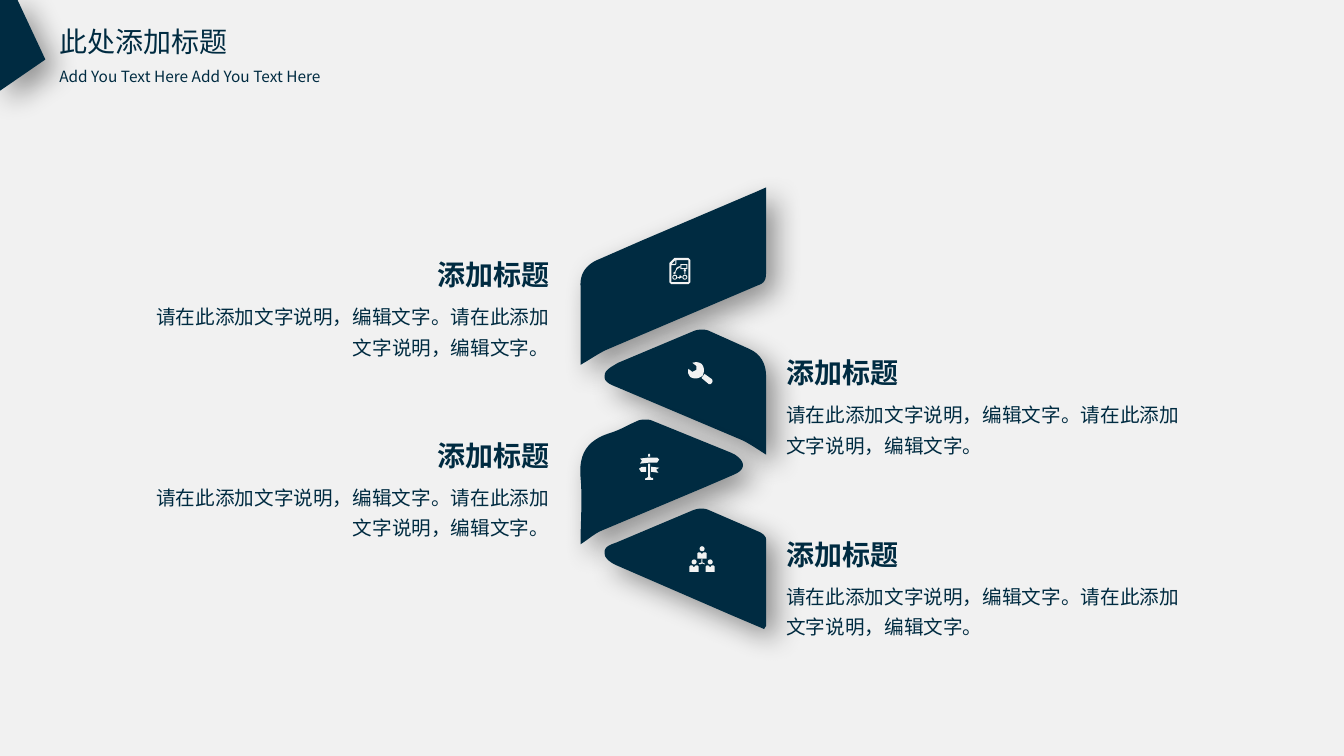
from lxml import etree
from pptx import Presentation
from pptx.dml.color import RGBColor
from pptx.enum.shapes import MSO_SHAPE
from pptx.enum.text import MSO_ANCHOR, MSO_AUTO_SIZE, PP_ALIGN
from pptx.oxml import parse_xml
from pptx.oxml.ns import qn
from pptx.util import Pt

LEFT, RIGHT = PP_ALIGN.LEFT, PP_ALIGN.RIGHT
TOP, NO_FIT = MSO_ANCHOR.TOP, MSO_AUTO_SIZE.NONE
OVAL, DONUT = MSO_SHAPE.OVAL, MSO_SHAPE.DONUT
COMPARISON_LAYOUT = 3 + 1
FONT = "Noto Sans CJK SC"
COLORS = {"navy": "002B41", "icon": "F2F2F2", "page": "F1F1F1"}
DRAWING_NS = "http://schemas.openxmlformats.org/drawingml/2006/main"
SHADOW = f"""<a:effectLst xmlns:a="{DRAWING_NS}">
<a:outerShdw blurRad="{Pt(20)}" dist="{Pt(10)}" dir="2700000" algn="tl" rotWithShape="0">
<a:srgbClr val="000000"><a:alpha val="40000"/></a:srgbClr></a:outerShdw></a:effectLst>"""

HEADING = "添加标题"
DETAIL = "请在此添加文字说明，编辑文字。请在此添加文字说明，编辑文字。"
ITEMS = [(LEFT, 180.7), (RIGHT, 250.6), (LEFT, 309.6), (RIGHT, 380.2)]  # side, top

# Outlines in points: pairs are corners, sextets are cubic curves
CORNER = [(12.2, -0.7), (0, -0.7), (0, 64.8), (32.4, 42.5)]
BANDS = [
    [(547.2, 133.9), (547.2, 195.1), (547.2, 200.2, 545.8, 202.3, 541.4, 203.8),
     (433.4, 249.8), (427, 252.7, 421.2, 257, 414.7, 260.6), (414.7, 205.2),
     (414, 195.1, 419, 188.6, 428.4, 185), (457.9, 172.1), (540.7, 136.8)],
    [(547.2, 324.7), (541.4, 321.1, 536.4, 317.5, 530.6, 314.6), (440.6, 276.5),
     (437, 275, 430.6, 272.9, 432, 267.8), (432, 264.2, 437.8, 261.4, 441.4, 259.2),
     (496.1, 236.2), (499.7, 235.1, 503.3, 235.1, 506.2, 236.2), (535, 249.1),
     (542.9, 252.7, 547.2, 259.2, 547.2, 268.6)],
    [(414.7, 388.8), (414.7, 373, 416.2, 356.4, 414.7, 340.6),
     (413.3, 324, 419.8, 314.6, 434.9, 309.6), (442.8, 307.4, 449.3, 303.1, 456.5, 300.2),
     (459.4, 299.5, 463, 299.5, 465.1, 300.2), (522, 323.3), (524.9, 324.7),
     (532.8, 329.8, 532.8, 335.5, 524.2, 339.1), (504, 347.8), (430.6, 378.7),
     (424.8, 380.9, 420.5, 385.2, 414.7, 388.8)],
    [(545.8, 449.3), (522, 439.2), (440.6, 403.9), (437, 402.5, 432, 398.9, 432, 396),
     (430.6, 390.2, 437, 388.8, 440.6, 387.4), (495.4, 364.3),
     (499.7, 362.9, 502.6, 362.9, 506.2, 364.3), (542.9, 380.2),
     (544.3, 380.9, 547.2, 383, 547.2, 385.2), (547.2, 447.1)],
]

# Icons: each part is a list of contours, later contours cut holes
DOCUMENT = [
    [[(478.1, 187.9), (481.7, 184.3), (491.8, 184.3), (493.2, 185.8), (493.2, 201.6),
      (491.8, 203), (479.5, 203), (478.1, 201.6)],
     [(482.4, 189.4), (479.5, 189.4), (479.5, 201.6), (491.8, 201.6), (491.8, 185.8),
      (483.1, 185.8), (483.1, 188.6)],
     [(479.5, 188.6), (482.4, 188.6), (482.4, 185.8)]],
    [[(486, 188.6), (491, 188.6), (491, 192.2), (486, 192.2)],
     [(486.7, 189.4), (490.3, 189.4), (490.3, 191.5), (486.7, 191.5)]],
    [[(486, 190.1), (485.3, 190.1, 483.8, 190.8, 483.1, 191.5),
      (483.1, 192.2, 482.4, 193.7, 481.7, 194.4), (481, 194.8), (481.2, 195.8),
      (483.1, 195.1), (482.4, 194.4), (483.8, 192.2), (486, 190.8)]],
    [[(483.8, 198), (485.3, 198), (485.3, 197), (486, 196.6), (487.4, 198), (486, 198.7),
      (485.3, 199.3), (485.3, 198.7), (483.8, 198.7)]],
    [[(488.9, 192.2), (489.6, 192.2), (490.3, 193.7), (489.6, 193.7), (489.6, 195.8),
      (488.9, 195.8), (488.9, 193.7), (488.2, 193.7)]],
]
WRENCH = [
    [[(508.3, 270.7), (503.3, 267.1), (501.1, 270), (506.2, 274.3),
      (506.2, 274.3, 507.6, 275, 508.3, 273.6), (509.8, 272.2, 508.3, 270.7, 508.3, 270.7)]],
    [[(501.8, 268.6), (502.6, 266.4), (503.3, 264.2, 502.6, 261.4, 501.1, 259.9),
      (499, 258.5, 496.8, 258.5, 494.6, 259.2), (497.5, 261.4), (497.5, 264.2),
      (494.6, 265.7), (491.8, 263.5), (491, 265.7, 491.8, 267.8, 493.2, 269.3),
      (495.4, 270.7, 498.2, 270.7, 500.4, 269.3)]],
]
SIGNPOST = [
    [[(470.2, 337.7), (465.1, 337), (465.1, 333.4), (470.9, 334.1), (468.7, 335.5)]],
    [[(463, 326.2), (463, 324.7), (463.7, 324), (464.4, 324.7), (464.4, 326.2)]],
    [[(464.4, 331.2), (464.4, 340.6), (465.1, 341.3), (466.6, 341.3), (466.6, 342.7),
      (460.8, 342.7), (460.8, 342), (461.5, 341.3), (462.2, 341.3), (463, 340.6),
      (463, 331.2)]],
    [[(461.5, 337), (457.9, 337), (456.5, 334.8), (458.6, 333.4), (461.5, 333.4)]],
    [[(457.2, 327.6), (463, 326.9), (469.4, 326.9), (470.9, 328.3), (469.4, 330.5),
      (463.7, 330.5), (457.2, 331.2), (458.6, 329)]],
]
TEAM_LINK = [(501.1, 399.6), (501.8, 398.9), (501.8, 401.8), (503.3, 402.5), (503.6, 403.2),
             (501.8, 402.5), (499.7, 403.2), (499, 402.5), (501.1, 401.8)]
PERSON_BODY = [(0, 8.8), (0, 5), (0.7, 4.3), (2, 4.3), (3.2, 5.6), (4.4, 4.3), (5.8, 4.3),
               (6.5, 5), (6.5, 8.8)]
PEOPLE = [(498.2, 390.2), (492.5, 399.6), (504, 399.6)]
RING_CENTERS = [(482, 198), (489.2, 198)]


def flatten(outline, steps=12):
    """Turn corners and cubic curves into a list of EMU points."""
    points = []
    for segment in outline:
        if len(segment) == 2:
            points.append(segment)
            continue
        curve = [points[-1], segment[:2], segment[2:4], segment[4:]]
        for step in range(1, steps + 1):
            t = step / steps
            weights = ((1 - t) ** 3, 3 * t * (1 - t) ** 2, 3 * t * t * (1 - t), t ** 3)
            points.append(tuple(sum(w * p[axis] for w, p in zip(weights, curve))
                                for axis in (0, 1)))
    return [(Pt(x), Pt(y)) for x, y in points]


def paint(shape, color):
    shape.shadow.inherit = False
    shape.fill.solid()
    shape.fill.fore_color.rgb = RGBColor.from_string(COLORS[color])
    shape.line.fill.background()


def add_outline(shapes, contours, color):
    first, *holes = [flatten(contour) for contour in contours]
    builder = shapes.build_freeform(*first[0], scale=1.0)
    builder.add_line_segments(first[1:], close=True)
    for hole in holes:
        builder.move_to(*hole[0])
        builder.add_line_segments(hole[1:], close=True)
    shape = builder.convert_to_shape()
    paint(shape, color)
    return shape


def add_shadowed(page, outline):
    shape = add_outline(page.shapes, [outline], "navy")
    properties = shape._element.spPr
    properties.replace(properties.find(qn("a:effectLst")), parse_xml(SHADOW))


def add_round(shapes, kind, left, top, size):
    shape = shapes.add_shape(kind, Pt(left), Pt(top), Pt(size), Pt(size))
    paint(shape, "icon")
    return shape


def add_icon(page, parts):
    group = page.shapes.add_group_shape()
    for contours in parts:
        add_outline(group.shapes, contours, "icon")
    return group


def set_text(box, frame, text, size, align=LEFT, bold=False, spacing=1.0, wrap=True):
    box.left, box.top, box.width, box.height = (Pt(value) for value in frame)
    text_frame = box.text_frame
    text_frame.text = text
    text_frame.word_wrap = wrap
    text_frame.auto_size = NO_FIT
    text_frame.vertical_anchor = TOP
    para = text_frame.paragraphs[0]
    para.alignment, para.line_spacing, para.space_before = align, spacing, Pt(0)
    properties = para._p.get_or_add_pPr()
    properties.set("marL", "0")
    properties.set("indent", "0")
    etree.SubElement(properties, qn("a:buNone"))
    span = para.runs[0]
    span.font.name, span.font.size, span.font.bold = FONT, Pt(size), bold
    span.font.color.rgb = RGBColor.from_string(COLORS["navy"])
    etree.SubElement(span.font._element, qn("a:ea")).set("typeface", FONT)


def add_text_box(page, frame, *args, **options):
    box = page.shapes.add_textbox(*(Pt(value) for value in frame))
    set_text(box, frame, *args, **options)


def main():
    deck = Presentation()
    deck.slide_width, deck.slide_height = Pt(960), Pt(540)
    page = deck.slides.add_slide(deck.slide_layouts[COMPARISON_LAYOUT])
    page.background.fill.solid()
    page.background.fill.fore_color.rgb = RGBColor.from_string(COLORS["page"])

    # Header
    title, *details = list(page.placeholders)[:5]
    set_text(title, (35.3, 13.7, 135.4, 31.7), "此处添加标题", 20, wrap=False)
    add_text_box(page, (35.3, 40.3, 220.3, 23), "Add You Text Here Add You Text Here", 11,
                 spacing=1.3)
    add_shadowed(page, CORNER)

    # Folded ribbon
    for band in BANDS:
        add_shadowed(page, band)

    # Icons
    document = add_icon(page, DOCUMENT)
    for x, y in RING_CENTERS:
        add_round(document.shapes, DONUT, x - 1.8, y - 1.8, 3.6).adjustments[0] = 0.2
    add_icon(page, WRENCH)
    add_icon(page, SIGNPOST)
    bodies = [[[(left + x, top + y) for x, y in PERSON_BODY]] for left, top in PEOPLE]
    team = add_icon(page, [[TEAM_LINK]] + bodies)
    for left, top in PEOPLE:
        add_round(team.shapes, OVAL, left + 1.5, top, 3.6)

    # Headings and descriptions beside the ribbon
    for (side, top), detail in zip(ITEMS, details):
        on_left = side == LEFT
        align = RIGHT if on_left else LEFT
        heading_left, detail_left = (294.5, 93.6) if on_left else (554.4, 554.4)
        add_text_box(page, (heading_left, top, 105.1, 31.7), HEADING, 20, align, bold=True)
        set_text(detail, (detail_left, top + 28.8, 306, 49), DETAIL, 14, align, spacing=1.3)

    deck.save("out.pptx")


if __name__ == "__main__":
    main()
